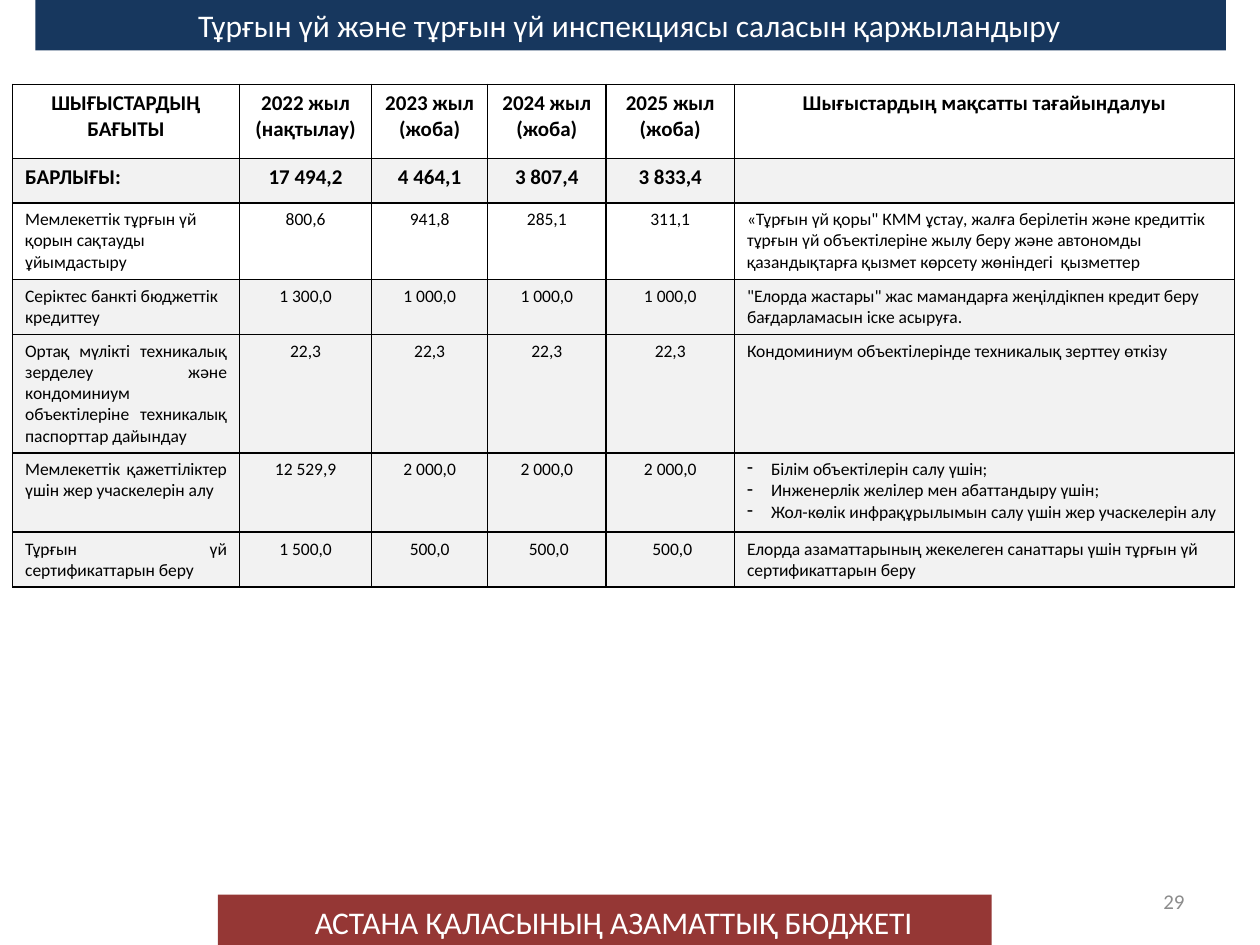
from lxml import etree
from pptx import Presentation
from pptx.dml.color import RGBColor
from pptx.enum.shapes import MSO_SHAPE
from pptx.enum.text import MSO_ANCHOR, PP_ALIGN
from pptx.oxml.ns import qn
from pptx.util import Inches, Pt

RECTANGLE = MSO_SHAPE.RECTANGLE
TOP, MIDDLE = MSO_ANCHOR.TOP, MSO_ANCHOR.MIDDLE
LEFT, CENTER = PP_ALIGN.LEFT, PP_ALIGN.CENTER
RIGHT, JUSTIFY = PP_ALIGN.RIGHT, PP_ALIGN.JUSTIFY

# Content
TITLE = "Тұрғын үй және тұрғын үй инспекциясы саласын қаржыландыру"
FOOTER = "АСТАНА ҚАЛАСЫНЫҢ АЗАМАТТЫҚ БЮДЖЕТІ"
PAGE_NUMBER = "29"
HEADER = ["ШЫҒЫСТАРДЫҢ БАҒЫТЫ", "2022 жыл\n(нақтылау)", "2023 жыл\n(жоба)",
          "2024 жыл\n(жоба)", "2025 жыл\n(жоба)",
          "Шығыстардың мақсатты тағайындалуы"]
TOTAL = ["БАРЛЫҒЫ:", "17 494,2", "4 464,1", "3 807,4", "3 833,4", ""]
EXPENSES = [
    ["Мемлекеттік тұрғын үй қорын сақтауды ұйымдастыру",
     "800,6", "941,8", "285,1", "311,1",
     "«Тұрғын үй қоры\" КММ ұстау, жалға берілетін және кредиттік тұрғын үй "
     "объектілеріне жылу беру және автономды қазандықтарға қызмет көрсету "
     "жөніндегі  қызметтер"],
    ["Серіктес банкті бюджеттік кредиттеу",
     "1 300,0", "1 000,0", "1 000,0", "1 000,0",
     "\"Елорда жастары\" жас мамандарға жеңілдікпен кредит беру "
     "бағдарламасын іске асыруға."],
    ["Ортақ мүлікті техникалық зерделеу және кондоминиум объектілеріне "
     "техникалық паспорттар дайындау",
     "22,3", "22,3", "22,3", "22,3",
     "Кондоминиум объектілерінде техникалық зерттеу өткізу"],
    ["Мемлекеттік қажеттіліктер үшін жер учаскелерін алу",
     "12 529,9", "2 000,0", "2 000,0", "2 000,0",
     ["Білім объектілерін салу үшін;",
      "Инженерлік желілер мен абаттандыру үшін;",
      "Жол-көлік инфрақұрылымын салу үшін жер учаскелерін алу"]],
    ["Тұрғын үй сертификаттарын беру",
     "1 500,0", "500,0", " 500,0", " 500,0",
     "Елорда азаматтарының жекелеген санаттары үшін тұрғын үй "
     "сертификаттарын беру"],
]
ROWS = [HEADER, TOTAL, *EXPENSES]

# Layout, in inches
SLIDE_SIZE = (10, 7.5)
BAND_HEIGHT = 0.4
TABLE_LEFT, TABLE_TOP = 0.1, 0.67
COLUMN_WIDTHS = [1.8, 1.05, 0.92, 0.94, 1.02, 3.97]
ROW_HEIGHTS = [0.59, 0.35, 0.61, 0.43, 0.94, 0.63, 0.43]
BULLET_INDENT = 0.19
WHITE_ROWS = (0, 2)
FIRST_JUSTIFIED_ROW = 4

# Formats
BAND_TEXT = {"name": "Calibri", "size": Pt(18), "bold": False}
HEAD_TEXT = {"name": "Calibri", "size": Pt(12), "bold": True}
BODY_TEXT = {"name": "Calibri", "size": Pt(10), "bold": False}
PAGE_TEXT = {"name": "Calibri", "size": Pt(12), "bold": False}


def rgb(color):
    return RGBColor.from_string(color)


def paint(target, color):
    target.fill.solid()
    target.fill.fore_color.rgb = rgb(color)


def write(paragraph, text, look, color, align):
    paragraph.alignment = align
    if not text:
        # An empty cell takes its text height from the paragraph end
        paragraph._p.get_or_add_endParaRPr().set("sz", str(int(look["size"].pt * 100)))
        return
    run = paragraph.add_run()
    run.text = text
    for attribute, value in look.items():
        setattr(run.font, attribute, value)
    run.font.color.rgb = rgb(color)


def add_band(slide, left, top, width, color):
    band = slide.shapes.add_shape(
        RECTANGLE, *map(Inches, (left, top, width, BAND_HEIGHT)))
    band.shadow.inherit = False
    paint(band, color)
    band.line.fill.background()


def add_label(slide, left, top, width, text, look, color, align, anchor=TOP):
    label = slide.shapes.add_textbox(*map(Inches, (left, top, width, BAND_HEIGHT)))
    label.text_frame.word_wrap = True
    label.text_frame.vertical_anchor = anchor
    write(label.text_frame.paragraphs[0], text, look, color, align)


def add_dash(paragraph):
    properties = paragraph._p.get_or_add_pPr()
    properties.set("marL", str(Inches(BULLET_INDENT)))
    properties.set("indent", str(-Inches(BULLET_INDENT)))
    etree.SubElement(properties, qn("a:buChar")).set("char", "-")


def add_borders(cell, color="000000", width=1):
    properties = cell._tc.get_or_add_tcPr()
    for position, side in enumerate(("a:lnL", "a:lnR", "a:lnT", "a:lnB")):
        line = etree.Element(qn(side), w=str(Pt(width)))
        fill = etree.SubElement(line, qn("a:solidFill"))
        etree.SubElement(fill, qn("a:srgbClr")).set("val", color)
        properties.insert(position, line)


def cell_align(row, column):
    if row == 0 or 0 < column < len(HEADER) - 1:
        return CENTER
    return JUSTIFY if column == 0 and row >= FIRST_JUSTIFIED_ROW else LEFT


def fill_cell(cell, content, row, column):
    bulleted = isinstance(content, list)
    lines = content if bulleted else content.split("\n")
    look = HEAD_TEXT if row < 2 else BODY_TEXT
    frame = cell.text_frame
    for number, line in enumerate(lines):
        paragraph = frame.add_paragraph() if number else frame.paragraphs[0]
        write(paragraph, line, look, "000000", cell_align(row, column))
        if bulleted:
            add_dash(paragraph)
    paint(cell, "FFFFFF" if row in WHITE_ROWS else "F2F2F2")
    add_borders(cell)


def add_budget_table(slide):
    table = slide.shapes.add_table(
        len(ROWS), len(HEADER), Inches(TABLE_LEFT), Inches(TABLE_TOP),
        Inches(sum(COLUMN_WIDTHS)), Inches(sum(ROW_HEIGHTS))).table
    for column, width in zip(table.columns, COLUMN_WIDTHS):
        column.width = Inches(width)
    for row, height in zip(table.rows, ROW_HEIGHTS):
        row.height = Inches(height)
    for row, contents in enumerate(ROWS):
        for column, content in enumerate(contents):
            fill_cell(table.cell(row, column), content, row, column)


def main():
    deck = Presentation()
    deck.slide_width, deck.slide_height = map(Inches, SLIDE_SIZE)
    slide = deck.slides.add_slide(deck.slide_layouts[6])

    # Footer and title bands
    add_band(slide, 1.73, SLIDE_SIZE[1] - BAND_HEIGHT, 6.14, "953735")
    add_label(slide, 2.4, 7.12, 5.28, FOOTER, BAND_TEXT, "FFFFFF", JUSTIFY)
    add_band(slide, 0.28, 0, 9.45, "17375E")
    add_label(slide, 0.35, 0, 9.29, TITLE, BAND_TEXT, "FFFFFF", CENTER)

    # Budget table and page number
    add_budget_table(slide)
    add_label(slide, 7.17, 6.95, 2.33, PAGE_NUMBER, PAGE_TEXT, "8C8C8C", RIGHT, MIDDLE)

    deck.save("out.pptx")


if __name__ == "__main__":
    main()
